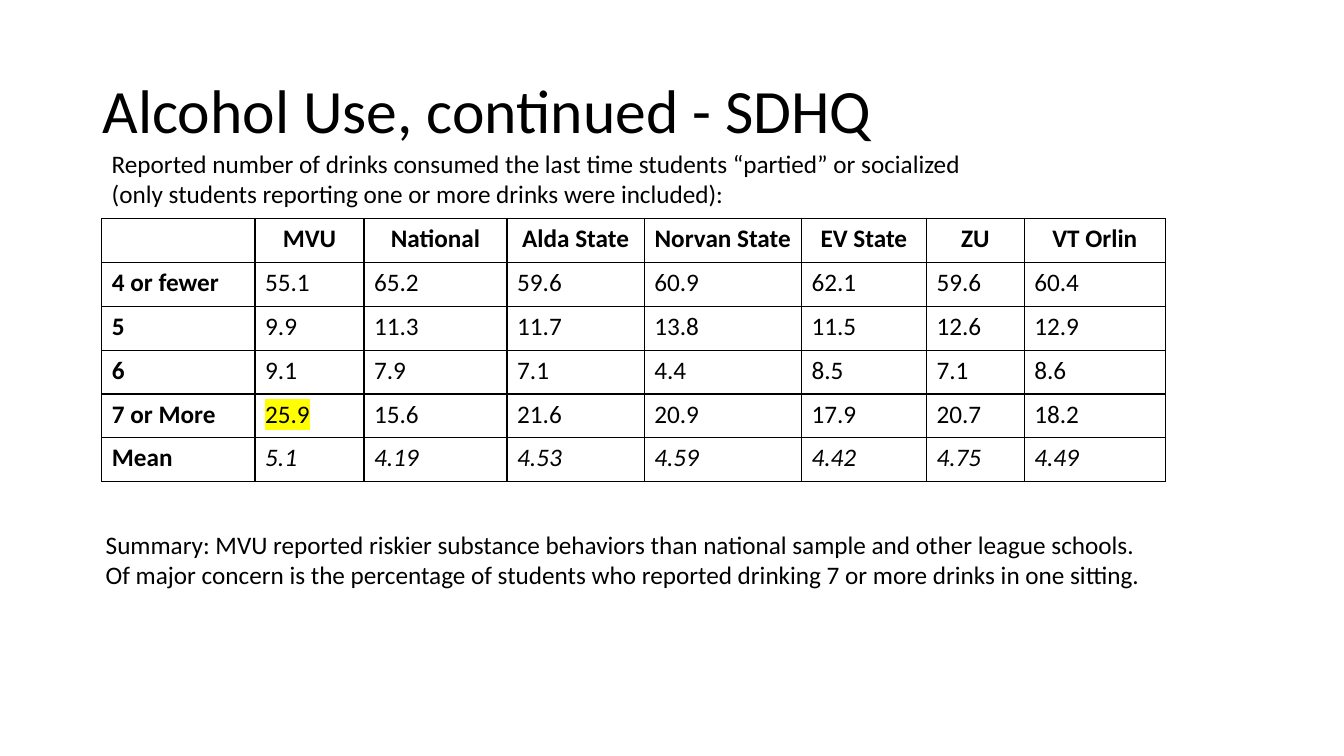
from dataclasses import dataclass

from lxml import etree
from pptx import Presentation
from pptx import util as u
from pptx.dml.color import RGBColor
from pptx.enum import text
from pptx.oxml import ns


@dataclass(frozen=True)
class Theme:
    font: str = "Calibri"
    ink: str = "000000"
    paper: str = "FFFFFF"
    marker: str = "FFFF00"
    title_size: int = 44
    body_size: int = 18
    border_width: float = 1


def add_color(parent, tag, color):
    """Append a DrawingML element that holds one RGB colour."""
    holder = etree.SubElement(parent, ns.qn(tag))
    etree.SubElement(holder, ns.qn("a:srgbClr"), val=color)
    return holder


class SlideBuilder:
    def __init__(self, slide, theme):
        self.slide = slide
        self.theme = theme
        slide.background.fill.solid()
        slide.background.fill.fore_color.rgb = RGBColor.from_string(theme.paper)

    def span(self, para, words, size, bold=False, italic=False, marked=False):
        span = para.add_run()
        span.text = words
        font = span.font
        font.size, font.bold, font.italic = u.Pt(size), bold, italic
        font.color.rgb = RGBColor.from_string(self.theme.ink)
        if marked:
            add_color(font._element, "a:highlight", self.theme.marker)
        font.name = self.theme.font

    def text_box(self, words, left, top, width, height, size):
        box = self.slide.shapes.add_textbox(
            u.Inches(left), u.Inches(top), u.Inches(width), u.Inches(height))
        frame = box.text_frame
        frame.word_wrap = True
        self.span(frame.paragraphs[0], words, size)
        return frame

    def title(self, words, left, top, width, height):
        frame = self.text_box(words, left, top, width, height, self.theme.title_size)
        frame.vertical_anchor = text.MSO_ANCHOR.MIDDLE
        frame.paragraphs[0].line_spacing = 0.9

    def body(self, words, left, top, width, height):
        frame = self.text_box(words, left, top, width, height, self.theme.body_size)
        frame.auto_size = text.MSO_AUTO_SIZE.SHAPE_TO_FIT_TEXT

    def border(self, cell):
        properties = cell._tc.get_or_add_tcPr()
        for position, side in enumerate(("a:lnL", "a:lnR", "a:lnT", "a:lnB")):
            line = etree.Element(ns.qn(side), w=str(u.Pt(self.theme.border_width)))
            add_color(line, "a:solidFill", self.theme.ink)
            properties.insert(position, line)

    def table(self, rows, left, top, column_widths, row_height, marked_cell):
        frame = self.slide.shapes.add_table(
            len(rows), len(column_widths), u.Inches(left), u.Inches(top),
            u.Inches(sum(column_widths)), u.Inches(row_height * len(rows)))
        table = frame.table
        for column, width in zip(table.columns, column_widths):
            column.width = u.Inches(width)
        for r, values in enumerate(rows):
            table.rows[r].height = u.Inches(row_height)
            for c, value in enumerate(values):
                cell = table.cell(r, c)
                cell.fill.background()
                self.border(cell)
                para = cell.text_frame.paragraphs[0]
                if r == 0:
                    para.alignment = text.PP_ALIGN.CENTER
                if value:
                    self.span(para, value, self.theme.body_size,
                              bold=r == 0 or c == 0,
                              italic=values[0] == "Mean" and c > 0,
                              marked=(r, c) == marked_cell)


DRINKS = [
    ["", "MVU", "National", "Alda State", "Norvan State", "EV State", "ZU", "VT Orlin"],
    ["4 or fewer", "55.1", "65.2", "59.6", "60.9", "62.1", "59.6", "60.4"],
    ["5", "9.9", "11.3", "11.7", "13.8", "11.5", "12.6", "12.9"],
    ["6", "9.1", "7.9", "7.1", "4.4", "8.5", "7.1", "8.6"],
    ["7 or More", "25.9", "15.6", "21.6", "20.9", "17.9", "20.7", "18.2"],
    ["Mean", "5.1", "4.19", "4.53", "4.59", "4.42", "4.75", "4.49"],
]
COLUMN_WIDTHS = [1.52, 1.08, 1.42, 1.36, 1.56, 1.24, 0.97, 1.4]


def main():
    deck = Presentation()
    deck.slide_width, deck.slide_height = u.Inches(13.33), u.Inches(7.5)
    page = SlideBuilder(deck.slides.add_slide(deck.slide_layouts[6]), Theme())

    # Heading and question
    page.title("Alcohol Use, continued - SDHQ", 0.92, 0.4, 11.5, 1.45)
    page.body("Reported number of drinks consumed the last time students “partied” or "
              "socialized (only students reporting one or more drinks were included):",
              1.01, 1.42, 8.92, 0.71)

    # Share of students by number of drinks
    page.table(DRINKS, 1.01, 2.17, COLUMN_WIDTHS, 2.61 / len(DRINKS), marked_cell=(4, 1))

    # Summary
    page.body("Summary: MVU reported riskier substance behaviors than national sample and "
              "other league schools. Of major concern is the percentage of students who "
              "reported drinking 7 or more drinks in one sitting.",
              0.95, 5.2, 10.61, 0.71)

    deck.save("out.pptx")


if __name__ == "__main__":
    main()
